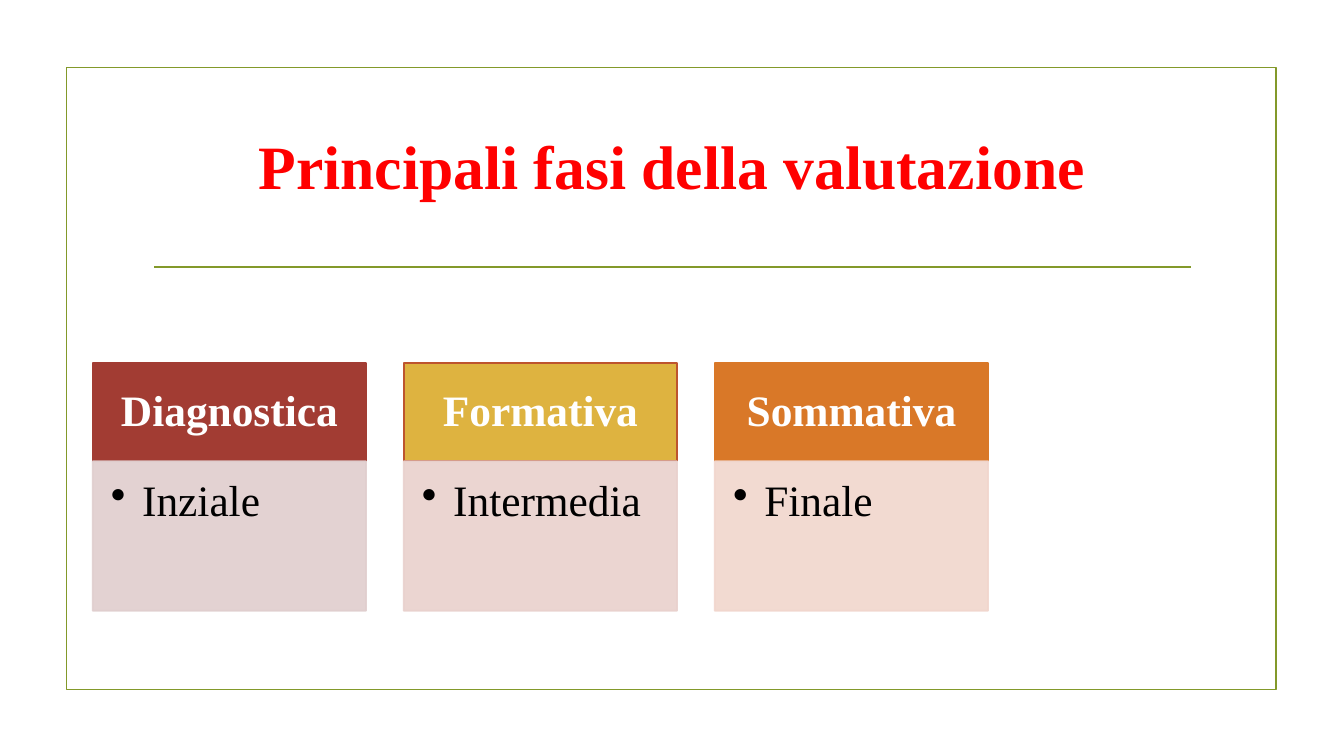
from lxml.etree import SubElement
from pptx import Presentation
from pptx.dml.color import RGBColor
from pptx.enum.shapes import MSO_CONNECTOR, MSO_SHAPE
from pptx.enum.text import MSO_ANCHOR, PP_ALIGN
from pptx.oxml.ns import qn
from pptx.util import Inches, Pt

FONT = "Times New Roman"
COLORS = {
    "frame": "83992A", "title": "FF0000", "header_text": "FFFFFF", "body_text": "000000",
    "red": "A23C33", "gold": "DEB340", "orange": "D97828", "rust": "BD542E",
    "pale_red": "E0CECE", "pale_rust": "E9D1CD", "pale_orange": "F1D6CD",
}
PHASES = [
    ("Diagnostica", "Inziale", "red", "red", "pale_red"),
    ("Formativa", "Intermedia", "gold", "rust", "pale_rust"),
    ("Sommativa", "Finale", "orange", "orange", "pale_orange"),
]
COLUMN_WIDTH, COLUMN_STEP, HEADER_HEIGHT = 2.71, 3.085, 0.975


def color(name):
    """Return the named colour."""
    return RGBColor.from_string(COLORS[name])


def add_rectangle(slide, box, line, fill=None):
    """Draw an outlined rectangle, filled when a fill is named."""
    rectangle = slide.shapes.add_shape(MSO_SHAPE.RECTANGLE, *map(Inches, box))
    rectangle.shadow.inherit = False
    rectangle.line.color.rgb = color(line)
    rectangle.line.width = Pt(1.25)
    if fill:
        rectangle.fill.solid()
        rectangle.fill.fore_color.rgb = color(fill)
    else:
        rectangle.fill.background()
    return rectangle


def write(holder, text, size, ink, bold, anchor, insets=(0.1, 0.05, 0.1, 0.05)):
    """Write one wrapped paragraph and return it."""
    frame = holder.text_frame
    frame.word_wrap = True
    frame.vertical_anchor = anchor
    frame.margin_left, frame.margin_top, frame.margin_right, frame.margin_bottom = map(Inches, insets)
    paragraph = frame.paragraphs[0]
    paragraph.text = text
    paragraph.font.name = FONT
    paragraph.font.size = Pt(size)
    paragraph.font.bold = bold
    paragraph.font.color.rgb = color(ink)
    paragraph.alignment = PP_ALIGN.CENTER
    return paragraph


def add_bullet(paragraph, indent):
    """Give the paragraph a hanging round bullet."""
    properties = paragraph._p.get_or_add_pPr()
    properties.set("marL", str(Inches(indent)))
    properties.set("indent", str(-Inches(indent)))
    bullet = SubElement(properties, qn("a:buChar"))
    bullet.set("char", "•")
    properties.insert_element_before(bullet, "a:tabLst", "a:defRPr", "a:extLst")


def add_heading(slide, box):
    """Place the title and the rule beneath it."""
    left, top, width, height = box
    title = slide.shapes.add_textbox(*map(Inches, box))
    write(title, "Principali fasi della valutazione", 44, "title", True, MSO_ANCHOR.MIDDLE)
    rule_y = top + height + 0.29
    rule = slide.shapes.add_connector(
        MSO_CONNECTOR.STRAIGHT, Inches(left + 0.61), Inches(rule_y),
        Inches(left + width - 0.61), Inches(rule_y))
    rule.line.color.rgb = color("frame")
    rule.line.width = Pt(1.25)
    SubElement(rule._element.spPr, qn("a:effectLst"))


def add_phase(slide, box, phase):
    """Place one phase: a coloured header over a pale bulleted body."""
    left, top, width, height = box
    heading, detail, fill, outline, pale = phase
    header = add_rectangle(slide, (left, top, width, HEADER_HEIGHT), outline, fill)
    label = write(header, heading, 31, "header_text", True, MSO_ANCHOR.MIDDLE, (0.24, 0.14, 0.24, 0.14))
    label.line_spacing = 0.9

    body = add_rectangle(
        slide, (left, top + HEADER_HEIGHT, width, height - HEADER_HEIGHT), pale, pale)
    for tint in body._element.spPr.iter(qn("a:srgbClr")):
        SubElement(tint, qn("a:alpha")).set("val", "90000")
    item = write(body, detail, 31, "body_text", False, MSO_ANCHOR.TOP, (0.18, 0.18, 0.24, 0.27))
    item.alignment = PP_ALIGN.LEFT
    item.line_spacing = 0.9
    add_bullet(item, 0.31)


def add_phases(slide, box):
    """Place the phases side by side from the left of the box."""
    left, top, height = box
    for index, phase in enumerate(PHASES):
        add_phase(slide, (left + index * COLUMN_STEP, top, COLUMN_WIDTH, height), phase)


def main():
    """Build and save the slide."""
    presentation = Presentation()
    presentation.slide_width = Inches(13.33)
    presentation.slide_height = Inches(7.5)
    slide = presentation.slides.add_slide(presentation.slide_layouts[6])
    add_rectangle(slide, (0.66, 0.67, 12, 6.17), "frame")
    add_heading(slide, (0.92, 0.91, 11.5, 1.45))
    add_phases(slide, (0.92, 3.6, 2.46))
    presentation.save("out.pptx")


if __name__ == "__main__":
    main()
